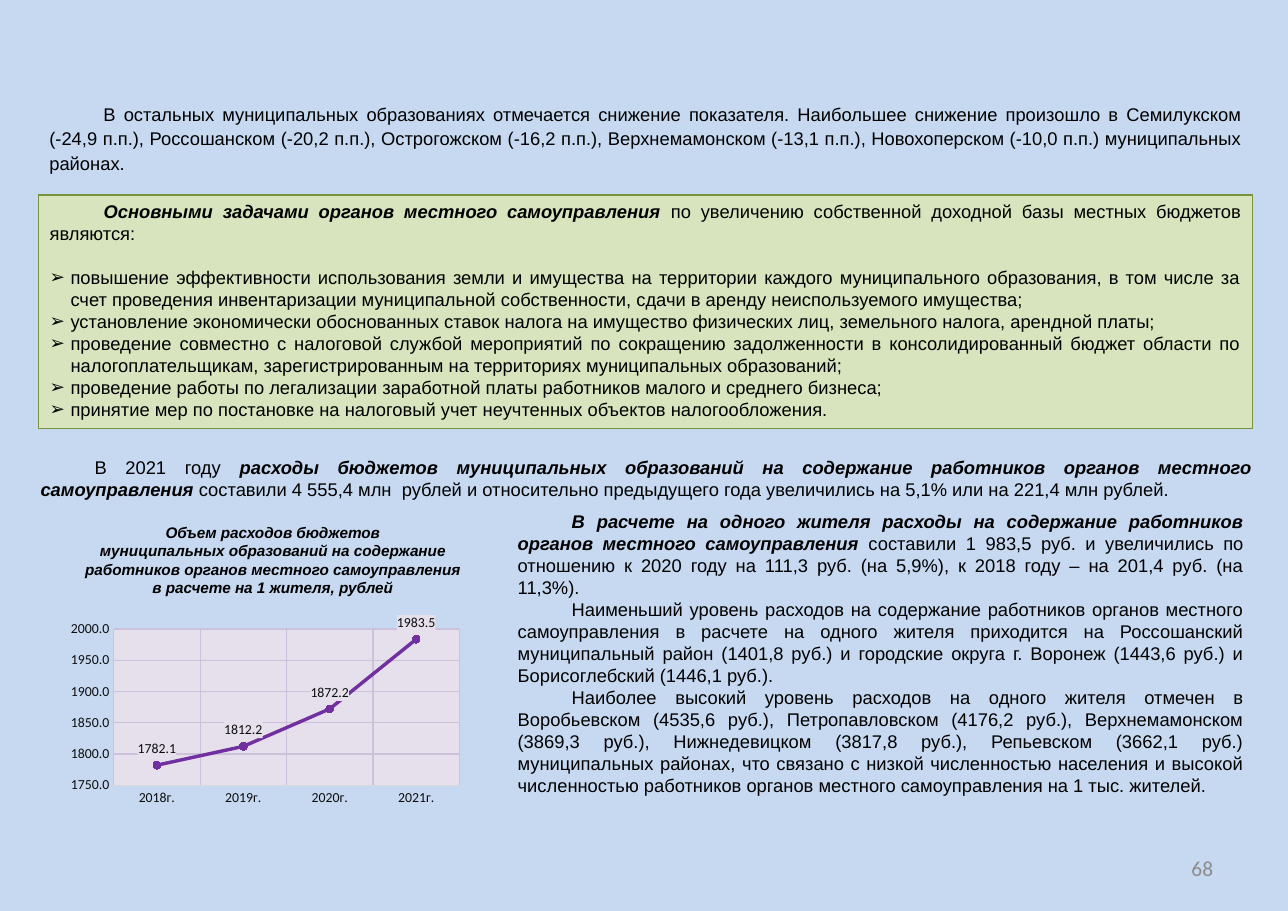
"""Build the slide on municipal budgets and the cost of local government staff."""
from lxml.etree import SubElement
from pptx import Presentation
from pptx.chart.data import CategoryChartData
from pptx.dml.color import RGBColor
from pptx.enum.chart import XL_CHART_TYPE, XL_LABEL_POSITION, XL_MARKER_STYLE, XL_TICK_MARK
from pptx.enum.text import MSO_ANCHOR, MSO_AUTO_SIZE, PP_ALIGN
from pptx.oxml import parse_xml
from pptx.oxml.ns import nsdecls, qn
from pptx.util import Inches, Pt

COLORS = {
    "background": "C6D9F1", "text": "000000", "number": "8C8C8C",
    "task_fill": "D7E4BD", "task_line": "77933C", "plot": "E6E0EC",
    "grid": "CCC1DA", "axis": "D9D9D9", "label": "0D0D0D", "series": "7030A0",
}
BODY_FONT = {"name": "Arial", "size": Pt(12), "bold": False, "italic": False}
HEADING_FONT = {"name": "Arial", "size": Pt(10), "bold": True, "italic": True}
NUMBER_FONT = {"name": "Calibri", "size": Pt(14)}
CHART_FONT = {"name": "Calibri", "size": Pt(9)}
JUSTIFIED = {"alignment": PP_ALIGN.JUSTIFY, "space_before": Pt(0)}
CENTERED = {"alignment": PP_ALIGN.CENTER, "space_before": Pt(0)}
FIRST_LINE = 0.49
BULLET_INDENT = 0.19

DECLINE = [[("В остальных муниципальных образованиях отмечается снижение показателя. Наибольшее снижение произошло в Семилукском (-24,9 п.п.), Россошанском (-20,2 п.п.), Острогожском (-16,2 п.п.), Верхнемамонском (-13,1 п.п.), Новохоперском (-10,0 п.п.) муниципальных районах.", False)]]
TASK_INTRO = [
    ("Основными задачами органов местного самоуправления", True),
    (" по увеличению собственной доходной базы местных бюджетов являются:", False),
]
TASKS = [
    "повышение эффективности использования земли и имущества на территории каждого муниципального образования, в том числе за счет проведения инвентаризации муниципальной собственности, сдачи в аренду неиспользуемого имущества;",
    "установление экономически обоснованных ставок налога на имущество физических лиц, земельного налога, арендной платы;",
    "проведение совместно с налоговой службой мероприятий по сокращению задолженности в консолидированный бюджет области по налогоплательщикам, зарегистрированным на территориях муниципальных образований;",
    "проведение работы по легализации заработной платы работников малого и среднего бизнеса;",
    "принятие мер по постановке на налоговый учет неучтенных объектов налогообложения.",
]
EXPENSES = [[
    ("В 2021 году ", False),
    ("расходы бюджетов муниципальных образований на содержание работников органов местного самоуправления ", True),
    ("составили 4 555,4 млн  рублей и относительно предыдущего года увеличились на 5,1% или на 221,4 млн рублей.", False),
]]
PER_RESIDENT = [
    [
        ("В расчете на одного жителя расходы на содержание работников органов местного самоуправления ", True),
        ("составили 1 983,5 руб. и увеличились по отношению к 2020 году на 111,3 руб. (на 5,9%), к 2018 году – на 201,4 руб. (на 11,3%).", False),
    ],
    [("Наименьший уровень расходов на содержание работников органов местного самоуправления в расчете на одного жителя приходится на Россошанский муниципальный район (1401,8 руб.) и городские округа г. Воронеж (1443,6 руб.) и Борисоглебский (1446,1 руб.).", False)],
    [("Наиболее высокий уровень расходов на одного жителя отмечен в Воробьевском (4535,6 руб.), Петропавловском (4176,2 руб.), Верхнемамонском (3869,3 руб.), Нижнедевицком (3817,8 руб.), Репьевском (3662,1 руб.) муниципальных районах, что связано с низкой численностью населения и высокой численностью работников органов местного самоуправления на 1 тыс. жителей.", False)],
]
CHART_HEADING = [
    "Объем расходов бюджетов",
    "муниципальных образований на содержание",
    "работников органов местного самоуправления",
    "в расчете на 1 жителя, рублей",
]
YEARS = ["2018г.", "2019г.", "2020г.", "2021г."]
EXPENSE_VALUES = [1782.1, 1812.2, 1872.2, 1983.5]


def color(name):
    """Return the named colour."""
    return RGBColor.from_string(COLORS[name])


def apply_format(target, values):
    """Set every attribute given in a dict."""
    for name, value in values.items():
        setattr(target, name, value)


def format_font(font, values, color_name="text"):
    """Set the attributes and the colour of a font."""
    apply_format(font, values)
    font.color.rgb = color(color_name)


def format_line(line, color_name, width=0.75):
    """Set the colour and width of a line."""
    line.color.rgb = color(color_name)
    line.width = Pt(width)


def place(shape, left, top, width, height):
    """Move and size a shape, given in inches."""
    apply_format(shape, {"left": Inches(left), "top": Inches(top),
                         "width": Inches(width), "height": Inches(height)})


def set_indent(paragraph, left, first, bullet=None):
    """Set the indents of a paragraph and its bullet."""
    properties = paragraph._p.get_or_add_pPr()
    properties.set("marL", str(Inches(left)))
    properties.set("indent", str(Inches(first)))
    if bullet:
        SubElement(properties, qn("a:buFont")).set("typeface", "Arial")
        SubElement(properties, qn("a:buChar")).set("char", bullet)
    else:
        SubElement(properties, qn("a:buNone"))


def write_paragraph(paragraph, runs, layout, font, color_name="text"):
    """Write runs of text, with the marked ones in bold italics."""
    apply_format(paragraph, layout)
    for text, emphasised in runs:
        run = paragraph.add_run()
        run.text = text
        format_font(run.font, font, color_name)
        if emphasised:
            apply_format(run.font, {"bold": True, "italic": True})


def paragraphs_of(frame, count):
    """Return the given number of paragraphs of a text frame."""
    return [frame.paragraphs[0]] + [frame.add_paragraph() for _ in range(count - 1)]


def prepare_frame(shape, wrap=True, anchor=MSO_ANCHOR.TOP):
    """Set wrapping and anchoring, and return the text frame."""
    apply_format(shape.text_frame, {"auto_size": MSO_AUTO_SIZE.NONE, "word_wrap": wrap,
                                    "vertical_anchor": anchor})
    return shape.text_frame


def add_prose(slide, box, texts, layout=JUSTIFIED):
    """Add a text box of justified paragraphs with an indented first line."""
    frame = prepare_frame(slide.shapes.add_textbox(*map(Inches, box)))
    for paragraph, runs in zip(paragraphs_of(frame, len(texts)), texts):
        write_paragraph(paragraph, runs, layout, BODY_FONT)
        set_indent(paragraph, 0, FIRST_LINE)


def fill_tasks(body):
    """Write the framed list of tasks in the body placeholder."""
    place(body, 0.35, 1.77, 11.02, 2.12)
    body.fill.solid()
    body.fill.fore_color.rgb = color("task_fill")
    format_line(body.line, "task_line")
    intro, *items = paragraphs_of(prepare_frame(body), len(TASKS) + 1)
    write_paragraph(intro, TASK_INTRO, JUSTIFIED, BODY_FONT)
    set_indent(intro, 0, FIRST_LINE)
    items[0].space_before = Pt(14)
    for index, (paragraph, task) in enumerate(zip(items, TASKS)):
        layout = {**JUSTIFIED, "space_before": Pt(0 if index else 14)}
        write_paragraph(paragraph, [(task, False)], layout, BODY_FONT)
        set_indent(paragraph, BULLET_INDENT, -BULLET_INDENT, "➢")


def fill_chart_heading(title):
    """Write the heading of the chart in the title placeholder."""
    place(title, 0.63, 4.7, 3.69, 0.77)
    frame = prepare_frame(title, wrap=False)
    for paragraph, text in zip(paragraphs_of(frame, len(CHART_HEADING)), CHART_HEADING):
        write_paragraph(paragraph, [(text, True)], CENTERED, HEADING_FONT)


def chart_fill():
    """Return the fill properties of the plot area and the labels."""
    return parse_xml(f'<c:spPr {nsdecls("c", "a")}><a:solidFill>'
                     f'<a:srgbClr val="{COLORS["plot"]}"/></a:solidFill></c:spPr>')


def format_plot_area(chart):
    """Set the place and fill of the plot area."""
    area = chart._chartSpace.find(".//" + qn("c:plotArea"))
    for layout in area.findall(qn("c:layout")):
        area.remove(layout)
    layout = parse_xml(f'<c:layout {nsdecls("c")}><c:manualLayout/></c:layout>')
    settings = {"layoutTarget": "inner", "xMode": "edge", "yMode": "edge",
                "x": 0.11, "y": 0.11, "w": 0.86, "h": 0.71}
    for name, value in settings.items():
        SubElement(layout[0], qn(f"c:{name}")).set("val", str(value))
    area.insert(0, layout)
    area.append(chart_fill())


def add_expense_chart(slide):
    """Add the line chart of expenses per resident."""
    data = CategoryChartData(number_format="0.0")
    data.categories = YEARS
    data.add_series("Расходы на 1 жителя", EXPENSE_VALUES)
    box = map(Inches, (0.63, 5.49, 3.65, 2))
    chart = slide.shapes.add_chart(XL_CHART_TYPE.LINE_MARKERS, *box, data).chart
    apply_format(chart, {"has_title": False, "has_legend": False})
    format_font(chart.font, CHART_FONT, "label")
    for axis in (chart.category_axis, chart.value_axis):
        apply_format(axis, {"has_major_gridlines": True, "major_tick_mark": XL_TICK_MARK.NONE})
        format_line(axis.major_gridlines.format.line, "grid")
        format_font(axis.tick_labels.font, CHART_FONT, "label")
    format_line(chart.category_axis.format.line, "axis")
    chart.value_axis.format.line.fill.background()
    apply_format(chart.value_axis, {"minimum_scale": 1750, "maximum_scale": 2000, "major_unit": 50})
    series = chart.plots[0].series[0]
    series.smooth = False
    format_line(series.format.line, "series", 2.25)
    apply_format(series.marker, {"style": XL_MARKER_STYLE.CIRCLE, "size": 5})
    series.marker.format.fill.solid()
    series.marker.format.fill.fore_color.rgb = color("series")
    format_line(series.marker.format.line, "series")
    labels = series.data_labels
    apply_format(labels, {"show_value": True, "position": XL_LABEL_POSITION.ABOVE})
    format_font(labels.font, CHART_FONT, "label")
    labels._element.find(qn("c:txPr")).addprevious(chart_fill())
    format_plot_area(chart)


def add_slide_number(slide):
    """Add the number of the slide."""
    shape = slide.shapes.add_textbox(*map(Inches, (8.38, 7.66, 2.73, 0.44)))
    frame = prepare_frame(shape, anchor=MSO_ANCHOR.MIDDLE)
    write_paragraph(frame.paragraphs[0], [("68", False)], {"alignment": PP_ALIGN.RIGHT},
                    NUMBER_FONT, "number")


def main():
    """Build and save the presentation."""
    presentation = Presentation()
    apply_format(presentation, {"slide_width": Inches(11.69), "slide_height": Inches(8.27)})
    slide = presentation.slides.add_slide(presentation.slide_layouts[1])
    slide.background.fill.solid()
    slide.background.fill.fore_color.rgb = color("background")
    fill_chart_heading(slide.shapes.title)
    fill_tasks(slide.placeholders[1])
    add_prose(slide, (0.35, 0.87, 11.03, 0.99), DECLINE, {**JUSTIFIED, "line_spacing": 1.1})
    add_prose(slide, (0.27, 4.09, 11.2, 0.5), EXPENSES)
    add_prose(slide, (4.6, 4.58, 6.79, 3.13), PER_RESIDENT)
    add_expense_chart(slide)
    add_slide_number(slide)
    presentation.save("out.pptx")


if __name__ == "__main__":
    main()
